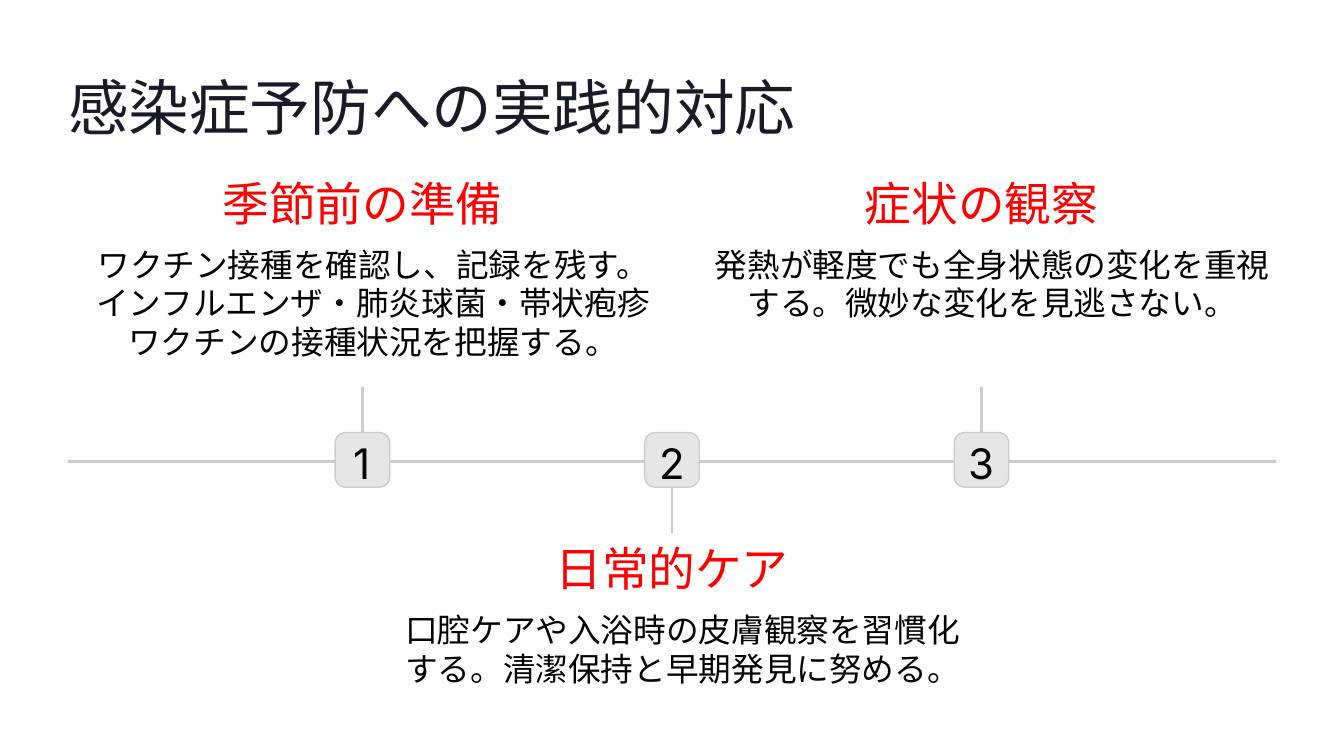
from dataclasses import dataclass

from pptx import Presentation
from pptx.dml.color import RGBColor
from pptx.enum.shapes import MSO_CONNECTOR, MSO_SHAPE
from pptx.enum.text import MSO_ANCHOR, MSO_AUTO_SIZE, PP_ALIGN
from pptx.oxml.ns import qn
from pptx.shapes.autoshape import Shape
from pptx.shapes.connector import Connector
from pptx.slide import Slide
from pptx.util import Cm, Pt
from lxml.etree import SubElement

GREY = "CCCCCC"
INK = "030303"
SLIDE_W = 40.64
MARGIN = 2.06
PITCH = 9.36
AXIS_Y = 13.96
BOX = 1.65
BOX_TOP = 13.08
STEM = 1.38
HEADING_W = 9.22
BODY_W = 16.97
BODY_SHIFT = 0.32


@dataclass(frozen=True)
class TextStyle:
    font: str
    size: float
    color: str
    leading: float
    align: PP_ALIGN = PP_ALIGN.CENTER
    wrap: bool = False


@dataclass(frozen=True)
class Step:
    heading: str
    body: str
    lines: int
    above: bool


TITLE = TextStyle("Inter", 52, "1B1B27", 65, PP_ALIGN.LEFT)
NUMBER = TextStyle("Inter", 36, INK, 31)
HEADING = TextStyle("Inter", 40, "FF0000", 32.5)
BODY = TextStyle("Roboto", 28, INK, 33, wrap=True)

STEPS = [
    Step("季節前の準備",
         "ワクチン接種を確認し、記録を残す。インフルエンザ・肺炎球菌・帯状疱疹ワクチンの接種状況を把握する。",
         3, True),
    Step("日常的ケア",
         "口腔ケアや入浴時の皮膚観察を習慣化する。清潔保持と早期発見に努める。",
         2, False),
    Step("症状の観察",
         "発熱が軽度でも全身状態の変化を重視する。微妙な変化を見逃さない。",
         2, True),
]


def rgb(color: str) -> RGBColor:
    return RGBColor.from_string(color)


def write(sp: Shape, text: str, style: TextStyle, top_inset: float = 0) -> None:
    tf = sp.text_frame
    tf.auto_size = MSO_AUTO_SIZE.NONE
    tf.word_wrap = style.wrap
    tf.vertical_anchor = MSO_ANCHOR.TOP
    tf.margin_left = tf.margin_right = tf.margin_bottom = 0
    tf.margin_top = Cm(top_inset)
    p = tf.paragraphs[0]
    p.alignment = style.align
    p.line_spacing = Pt(style.leading)
    r = p.add_run()
    r.text = text
    r.font.name = style.font
    r.font.size = Pt(style.size)
    r.font.color.rgb = rgb(style.color)


def add_text(s: Slide, center: float, top: float, width: float, height: float,
             text: str, style: TextStyle) -> None:
    sp = s.shapes.add_textbox(Cm(center - width / 2), Cm(top), Cm(width), Cm(height))
    write(sp, text, style)


def add_line(s: Slide, x1: float, y1: float, x2: float, y2: float) -> Connector:
    line = s.shapes.add_connector(MSO_CONNECTOR.STRAIGHT, Cm(x1), Cm(y1), Cm(x2), Cm(y2))
    line.line.color.rgb = rgb(GREY)
    line.line.width = Pt(2.2)
    SubElement(line._element.spPr, qn("a:effectLst"))
    return line


def add_number_box(s: Slide, center: float, number: int) -> Shape:
    sp = s.shapes.add_shape(MSO_SHAPE.ROUNDED_RECTANGLE, Cm(center - BOX / 2),
                            Cm(BOX_TOP), Cm(BOX), Cm(BOX))
    sp.adjustments[0] = 0.19
    sp.shadow.inherit = False
    sp.fill.solid()
    sp.fill.fore_color.rgb = rgb("E6E6E6")
    sp.line.color.rgb = rgb(GREY)
    sp.line.width = Pt(1.2)
    write(sp, str(number), NUMBER, top_inset=0.48)
    return sp


def add_step(s: Slide, number: int, step: Step) -> None:
    center = SLIDE_W / 2 + (number - 2) * PITCH
    box = add_number_box(s, center, number)
    edge = BOX_TOP if step.above else BOX_TOP + BOX
    far = edge - STEM if step.above else edge + STEM
    stem = add_line(s, center, edge, center, far)
    stem.begin_connect(box, 0 if step.above else 2)
    top = 5.82 if step.above else 16.87
    add_text(s, center, top, HEADING_W, 1.14, step.heading, HEADING)
    add_text(s, center + BODY_SHIFT, top + 1.6, BODY_W, step.lines * 1.18, step.body, BODY)


def main() -> None:
    prs = Presentation()
    prs.slide_width = Cm(SLIDE_W)
    prs.slide_height = Cm(22.86)
    s = prs.slides.add_slide(prs.slide_layouts[5])
    title = s.shapes.title
    title.left, title.top, title.width, title.height = Cm(MARGIN), Cm(2.03), Cm(22.15), Cm(2.31)
    write(title, "感染症予防への実践的対応", TITLE)
    add_line(s, MARGIN, AXIS_Y, SLIDE_W - MARGIN, AXIS_Y)
    for number, step in enumerate(STEPS, 1):
        add_step(s, number, step)
    prs.save("out.pptx")


if __name__ == "__main__":
    main()
